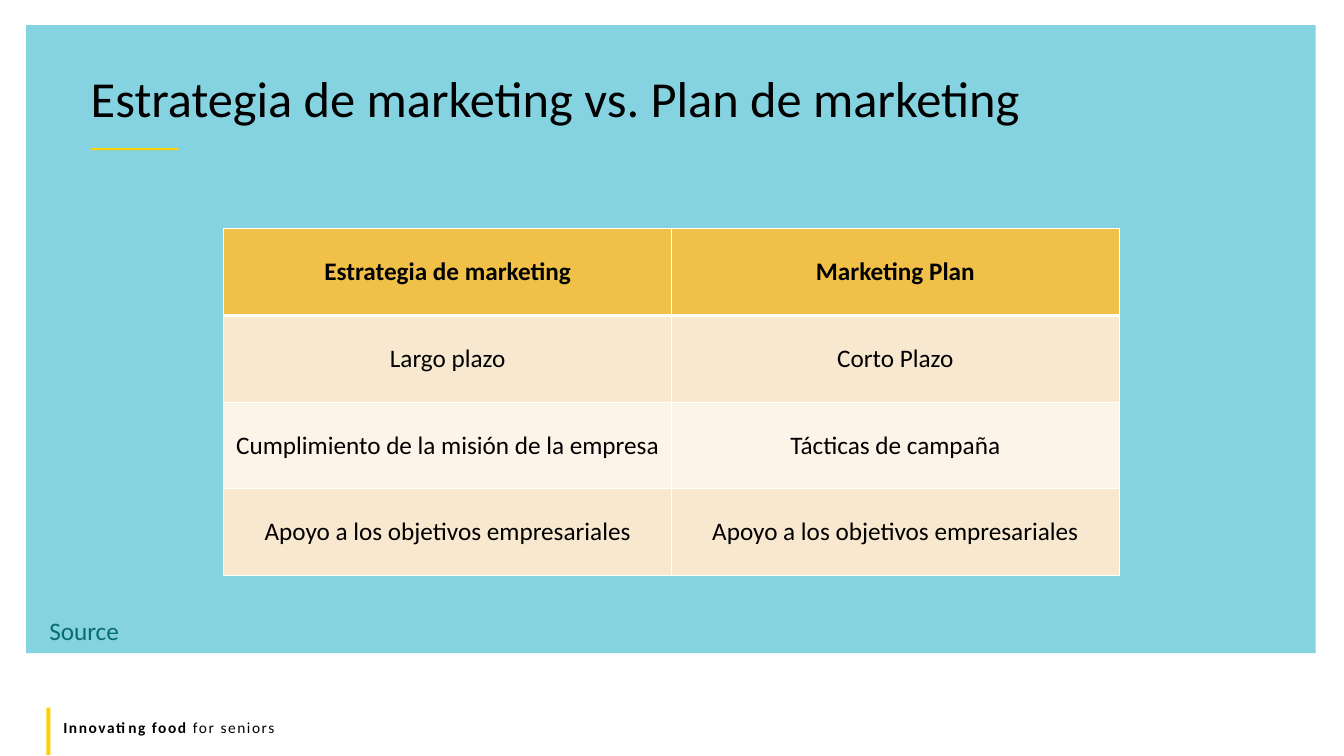
from lxml import etree
from pptx import Presentation
from pptx.dml.color import RGBColor
from pptx.enum.shapes import MSO_SHAPE
from pptx.enum.text import MSO_ANCHOR, PP_ALIGN
from pptx.oxml.ns import qn
from pptx.util import Pt

PX = 9144  # EMU, 100 px to the inch
RECTANGLE = MSO_SHAPE.RECTANGLE
MIDDLE = MSO_ANCHOR.MIDDLE
LEFT, CENTER = PP_ALIGN.LEFT, PP_ALIGN.CENTER
TITLE_ONLY = 5

AQUA, YELLOW, TEAL = "85D2E1", "FFD100", "086D6E"
BLACK, WHITE = "000000", "FFFFFF"
GOLD, SAND, CREAM = "F0C049", "F9E8D0", "FCF4E9"

COMPARISON = [
    ("Estrategia de marketing", "Marketing Plan"),
    ("Largo plazo", "Corto Plazo"),
    ("Cumplimiento de la misión de la empresa", "Tácticas de campaña"),
    ("Apoyo a los objetivos empresariales", "Apoyo a los objetivos empresariales"),
]


def px(*lengths):
    return [length * PX for length in lengths]


def rgb(hex_colour):
    return RGBColor.from_string(hex_colour)


class SlideBuilder:
    font_name = "Calibri"

    def __init__(self, presentation):
        self.slide = presentation.slides.add_slide(presentation.slide_layouts[TITLE_ONLY])
        self.shapes = self.slide.shapes

    def style(self, paragraph, size, colour=BLACK, bold=False, align=LEFT):
        paragraph.alignment = align
        font = paragraph.font
        font.name, font.size, font.bold = self.font_name, Pt(size), bold
        font.color.rgb = rgb(colour)

    def block(self, left, top, width, height, colour):
        block = self.shapes.add_shape(RECTANGLE, *px(left, top, width, height))
        block.shadow.inherit = False
        block.fill.solid()
        block.fill.fore_color.rgb = rgb(colour)
        block.line.fill.background()

    def title(self, left, top, width, height, wording):
        """Fill the title placeholder and bring it in front of the blocks."""
        title = self.shapes.title
        title.left, title.top, title.width, title.height = px(left, top, width, height)
        frame = title.text_frame
        frame.text = wording
        frame.word_wrap = True
        frame.vertical_anchor = MIDDLE
        frame.margin_left = frame.margin_right = 0
        heading = frame.paragraphs[0]
        heading.line_spacing = 0.8
        self.style(heading, 36)
        title.element.getparent().append(title.element)

    def text(self, left, top, width, height, runs, size, colour=BLACK, spacing=0):
        """Write one line from (wording, bold) runs; spacing is in points."""
        frame = self.shapes.add_textbox(*px(left, top, width, height)).text_frame
        frame.word_wrap = True
        line = frame.paragraphs[0]
        self.style(line, size, colour)
        for wording, bold in runs:
            run = line.add_run()
            run.text = wording
            run.font.bold = bold
            if spacing:
                run.font._element.set("spc", str(round(spacing * 100)))

    def border(self, cell, **points):
        properties = cell._tc.get_or_add_tcPr()
        for side, width in points.items():
            line = etree.SubElement(properties, qn(f"a:ln{side}"), w=str(Pt(width)))
            fill = etree.SubElement(line, qn("a:solidFill"))
            etree.SubElement(fill, qn("a:srgbClr"), val=WHITE)

    def table(self, left, top, column_width, row_height, rows, size):
        columns = len(rows[0])
        table = self.shapes.add_table(
            len(rows), columns,
            *px(left, top, column_width * columns, row_height * len(rows))).table
        for r, row in enumerate(rows):
            header = r == 0
            colour = GOLD if header else (CREAM, SAND)[r % 2]
            for c, wording in enumerate(row):
                cell = table.cell(r, c)
                self.border(cell, L=1, R=1, T=3 if r == 1 else 1, B=3 if header else 1)
                cell.fill.solid()
                cell.fill.fore_color.rgb = rgb(colour)
                cell.text = wording
                cell.vertical_anchor = MIDDLE
                self.style(cell.text_frame.paragraphs[0], size, bold=header, align=CENTER)


def main():
    presentation = Presentation()
    presentation.slide_width, presentation.slide_height = px(1333, 750)
    slide = SlideBuilder(presentation)

    slide.block(26, 25, 1279, 623, AQUA)
    slide.block(90, 147, 87, 2, YELLOW)
    slide.text(53, 707, 1200, 29, [("Innovating food ", True), ("for seniors", False)],
               11, spacing=1.1)
    slide.block(46, 702, 4, 47, YELLOW)
    slide.title(90, 70, 1182, 64, "Estrategia de marketing vs. Plan de marketing")
    slide.table(222, 227, 444, 86, COMPARISON, 18)
    slide.text(39, 606, 141, 40, [("Source", False)], 18, TEAL)

    presentation.save("out.pptx")


if __name__ == "__main__":
    main()
